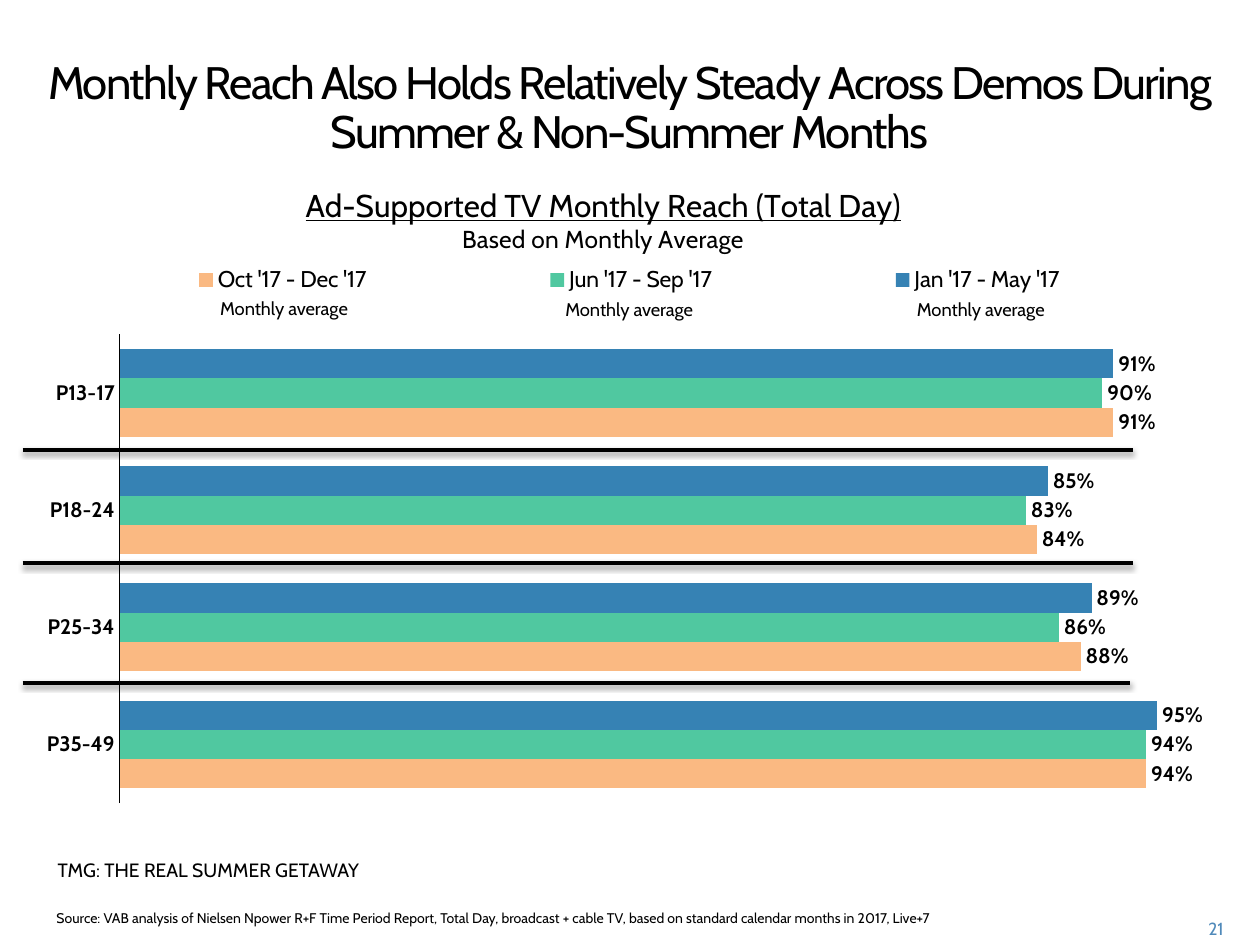
from dataclasses import dataclass

from lxml import etree
from pptx import Presentation
from pptx.chart import data
from pptx.dml.color import RGBColor
from pptx.enum import chart as ch, shapes, text
from pptx.oxml import parse_xml
from pptx.oxml.ns import nsdecls, qn
from pptx.util import Inches, Pt


@dataclass(frozen=True)
class Theme:
    font: str = "Cabin"
    ink: str = "000000"
    page: str = "508ABA"
    head: float = 26
    title: float = 18
    sub: float = 14
    key: float = 13
    label: float = 12
    foot: float = 11
    note: float = 10.5
    num: float = 10
    source: float = 8


@dataclass(frozen=True)
class Label:
    words: str
    box: tuple[float, float, float, float]
    size: float
    align: str = "LEFT"
    color: str = Theme.ink
    lead: float = 0
    track: int = 0


@dataclass(frozen=True)
class Series:
    name: str
    vals: tuple[float, ...]
    color: str


@dataclass(frozen=True)
class Rule:
    y: float
    right: float


T = Theme()

LABELS = [
    Label("21", (9.2, 7.24, 0.61, 0.25), T.num, "RIGHT", T.page),
    Label("Source: VAB analysis of Nielsen Npower R+F Time Period Report, Total Day, "
          "broadcast + cable TV, based on standard calendar months in 2017, Live+7",
          (0.35, 7.17, 8, 0.26), T.source),
    Label("Monthly Reach Also Holds Relatively Steady Across Demos During "
          "Summer & Non-Summer Months",
          (0.18, 0.42, 9.63, 0.97), T.head, "CENTER", lead=28, track=-100),
    Label("TMG: THE REAL SUMMER GETAWAY", (0.36, 6.76, 2.61, 0.47), T.foot),
]
NOTES = [Label("Monthly average", (x, y, 1.43, 0.29), T.note, "CENTER")
         for x, y in ((1.54, 2.31), (4.28, 2.32), (7.07, 2.32))]
GROUPS = ("P13-17", "P18-24", "P25-34", "P35-49")
SERIES = [
    Series("Jan '17 - May '17", (0.91, 0.85, 0.89, 0.95), "3682B4"),
    Series("Jun '17 - Sep '17", (0.9, 0.83, 0.86, 0.94), "50C8A0"),
    Series("Oct '17 - Dec '17", (0.91, 0.84, 0.88, 0.94), "FAB982"),
]
RULES = [Rule(3.57, 8.99), Rule(4.47, 8.99), Rule(5.42, 8.97)]


def style(font, size: float, color: str = T.ink, **extra) -> None:
    for key, val in {"name": T.font, "size": Pt(size), **extra}.items():
        setattr(font, key, val)
    font.color.rgb = RGBColor.from_string(color)


def write(slide, item: Label) -> None:
    frame = slide.shapes.add_textbox(*map(Inches, item.box)).text_frame
    frame.word_wrap = True
    para = frame.paragraphs[0]
    para.alignment = getattr(text.PP_ALIGN, item.align)
    if item.lead:
        para.line_spacing = Pt(item.lead)
    run = para.add_run()
    run.text = item.words
    style(run.font, item.size, item.color)
    if item.track:
        run.font._element.set("spc", str(item.track))


def place(node, **spots) -> None:
    """Give a chart part a manual layout, in fractions of the chart."""
    old = node.find(qn("c:layout"))
    if old is not None:
        node.remove(old)
    layout = parse_xml(f"<c:layout {nsdecls('c')}><c:manualLayout/></c:layout>")
    for tag, val in spots.items():
        etree.SubElement(layout[0], qn(f"c:{tag}")).set("val", str(val))
    # The layout follows the title text or legend position; it leads the plot area
    prior = [kid for kid in node if kid.tag in (qn("c:tx"), qn("c:legendPos"))]
    node.insert(node.index(prior[-1]) + 1 if prior else 0, layout)


def plot(slide) -> None:
    src = data.CategoryChartData(number_format="0%")
    src.categories = GROUPS
    for row in SERIES:
        src.add_series(row.name, row.vals)
    box = map(Inches, (0.18, 1.28, 9.63, 5.1))
    chart = slide.shapes.add_chart(ch.XL_CHART_TYPE.BAR_CLUSTERED, *box, src).chart
    style(chart.font, T.num)

    # Title in two lines
    frame = chart.chart_title.text_frame
    lines = (("Ad-Supported TV Monthly Reach (Total Day)", T.title, True),
             ("Based on Monthly Average", T.sub, False))
    for i, (words, size, under) in enumerate(lines):
        para = frame.add_paragraph() if i else frame.paragraphs[0]
        run = para.add_run()
        run.text = words
        style(run.font, size, bold=False, underline=under)
    chart.chart_title.include_in_layout = False
    place(chart.chart_title._element, xMode="edge", yMode="edge", x=0.23, y=0.03)

    # Legend
    chart.has_legend = True
    key = chart.legend
    key.position = ch.XL_LEGEND_POSITION.BOTTOM
    key.include_in_layout = False
    style(key.font, T.key)
    place(key._element, xMode="edge", yMode="edge", x=0, y=0.15, w=1, h=0.07)

    # Axes
    cat, val = chart.category_axis, chart.value_axis
    cat.reverse_order = True
    cat.major_tick_mark = ch.XL_TICK_MARK.NONE
    cat.format.line.color.rgb = RGBColor.from_string(T.ink)
    cat.format.line.width = Pt(0.75)
    style(cat.tick_labels.font, T.label, bold=True)
    for name, setting in {"visible": False, "has_major_gridlines": False,
                          "minimum_scale": 0, "maximum_scale": 1}.items():
        setattr(val, name, setting)

    # Bars and their labels
    bars = chart.plots[0]
    bars.gap_width, bars.overlap, bars.vary_by_categories = 100, 0, False
    for bar, row in zip(bars.series, SERIES):
        bar.format.fill.solid()
        bar.format.fill.fore_color.rgb = RGBColor.from_string(row.color)
        tags = bar.data_labels
        tags.show_value = True
        tags.number_format, tags.number_format_is_linked = "0%", False
        tags.position = ch.XL_LABEL_POSITION.OUTSIDE_END
        style(tags.font, T.label, bold=True)
    place(chart._chartSpace.chart.plotArea, layoutTarget="inner", xMode="edge",
          yMode="edge", x=0.08, y=0.27, w=0.9, h=0.73)


def divide(slide, rule: Rule) -> None:
    ends = map(Inches, (0.18, rule.y, rule.right, rule.y))
    line = slide.shapes.add_connector(shapes.MSO_CONNECTOR.STRAIGHT, *ends)
    line.line.color.rgb = RGBColor.from_string(T.ink)
    line.line.width = Pt(2)
    line._element.spPr.append(parse_xml(
        f'<a:effectLst {nsdecls("a")}><a:outerShdw blurRad="{Pt(3.1)}" '
        f'dist="{Pt(1.6)}" dir="5400000" rotWithShape="0"><a:srgbClr val="{T.ink}">'
        '<a:alpha val="38000"/></a:srgbClr></a:outerShdw></a:effectLst>'))


def main() -> None:
    deck = Presentation()
    deck.slide_width, deck.slide_height = Inches(10), Inches(7.5)
    slide = deck.slides.add_slide(deck.slide_layouts[6])
    plot(slide)
    for item in LABELS + NOTES:
        write(slide, item)
    for rule in RULES:
        divide(slide, rule)
    deck.save("out.pptx")


if __name__ == "__main__":
    main()
